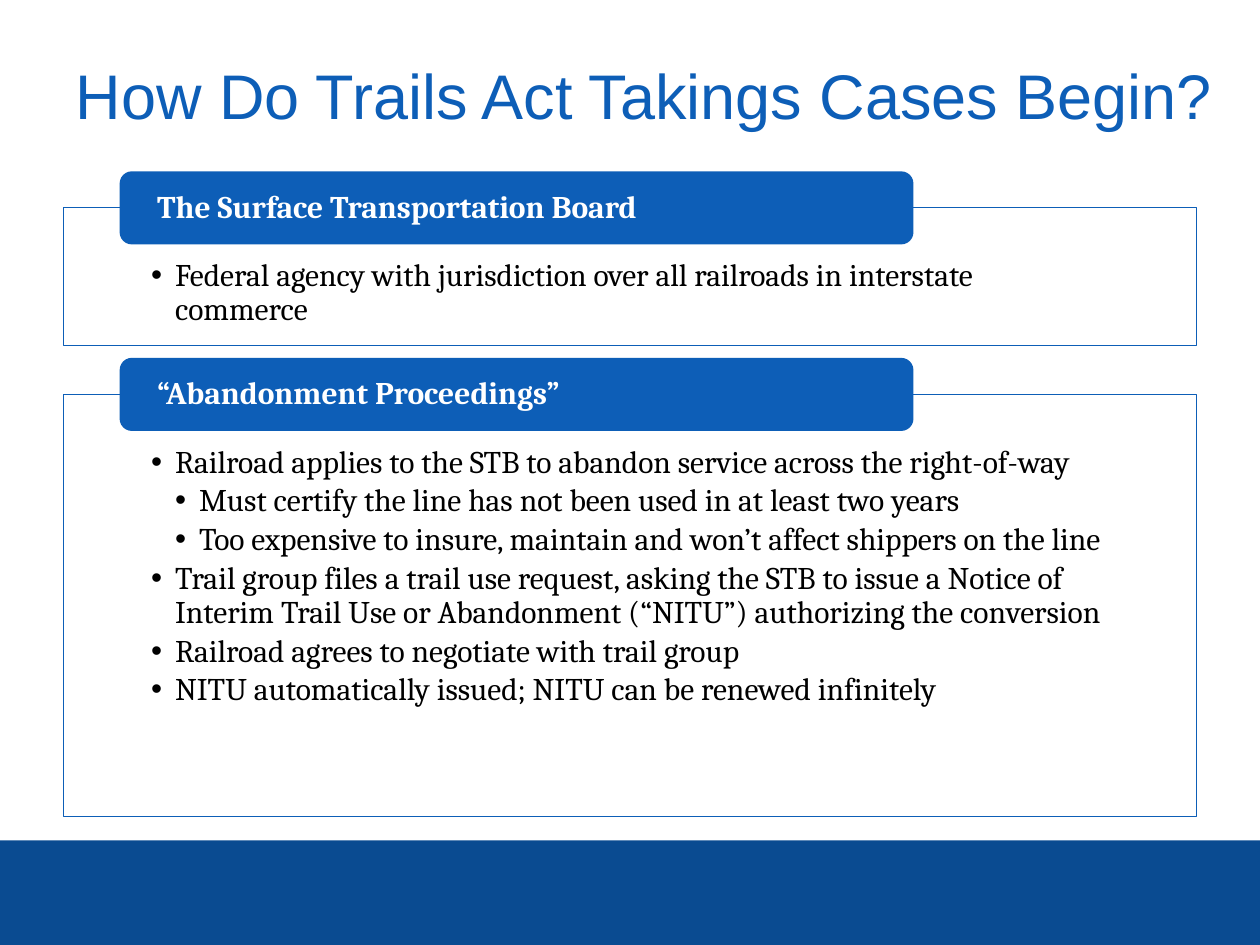
from lxml.etree import SubElement
from pptx import Presentation
from pptx.dml.color import RGBColor
from pptx.enum.shapes import MSO_SHAPE
from pptx.enum.text import MSO_ANCHOR, PP_ALIGN
from pptx.oxml.ns import qn
from pptx.util import Inches, Pt

COLORS = {"blue": "0D5EB7", "navy": "0A4B91", "white": "FFFFFF", "black": "000000"}
INDENT = Inches(0.19)
HEADER_RISE = 0.29

SECTIONS = [
    (1.65, 1.09, "The Surface Transportation Board", [
        (1, "Federal agency with jurisdiction over all railroads in interstate commerce"),
    ]),
    (3.13, 3.35, "“Abandonment Proceedings”", [
        (1, "Railroad applies to the STB to abandon service across the right-of-way"),
        (2, "Must certify the line has not been used in at least two years"),
        (2, "Too expensive to insure, maintain and won’t affect shippers on the line"),
        (1, "Trail group files a trail use request, asking the STB to issue a Notice of "
            "Interim Trail Use or Abandonment (“NITU”) authorizing the conversion"),
        (1, "Railroad agrees to negotiate with trail group"),
        (1, "NITU automatically issued; NITU can be renewed infinitely"),
    ]),
]


def color(name):
    return RGBColor.from_string(COLORS[name])


def add_box(slide, kind, left, top, width, height, fill, line=None):
    shape = slide.shapes.add_shape(
        kind, Inches(left), Inches(top), Inches(width), Inches(height))
    shape.shadow.inherit = False
    shape.fill.solid()
    shape.fill.fore_color.rgb = color(fill)
    if line:
        shape.line.color.rgb = color(line)
        shape.line.width = Pt(0.5)
    else:
        shape.line.fill.background()
    return shape


def set_frame(text_frame, anchor, left, top, right, bottom):
    text_frame.word_wrap = True
    text_frame.vertical_anchor = anchor
    text_frame.margin_left, text_frame.margin_top = Inches(left), Inches(top)
    text_frame.margin_right, text_frame.margin_bottom = Inches(right), Inches(bottom)


def format_paragraph(paragraph, font_name, size, font_color, bold=False):
    paragraph.alignment = PP_ALIGN.LEFT
    paragraph.line_spacing = 0.9
    for run in paragraph.runs:
        run.font.name = font_name
        run.font.size = Pt(size)
        run.font.bold = bold
        run.font.color.rgb = color(font_color)


def add_bullet(paragraph, level):
    properties = paragraph._p.get_or_add_pPr()
    properties.set("marL", str(INDENT * level))
    properties.set("indent", str(-INDENT))
    paragraph.level = level
    paragraph.space_after = Pt(2.7)
    SubElement(properties, qn("a:buFont"), typeface="Arial")
    SubElement(properties, qn("a:buChar"), char="•")


def add_title(slide, text, left, top, width, height):
    title = slide.shapes.title
    title.left, title.top = Inches(left), Inches(top)
    title.width, title.height = Inches(width), Inches(height)
    title.text_frame.text = text
    set_frame(title.text_frame, MSO_ANCHOR.MIDDLE, 0.1, 0.05, 0.1, 0.05)
    format_paragraph(title.text_frame.paragraphs[0], "Arial", 36, "blue")


def add_section(slide, left, top, width, height, heading, items):
    body = add_box(slide, MSO_SHAPE.RECTANGLE, left, top, width, height, "white", "blue")
    text_frame = body.text_frame
    set_frame(text_frame, MSO_ANCHOR.TOP, 0.7, 0.41, 0.7, 0.14)
    text_frame.text = "\n".join(text for level, text in items)
    for paragraph, (level, text) in zip(text_frame.paragraphs, items):
        format_paragraph(paragraph, "Cambria", 18, "black")
        add_bullet(paragraph, level)

    header = add_box(slide, MSO_SHAPE.ROUNDED_RECTANGLE, left + 0.45, top - HEADER_RISE,
                     width * 0.7, 2 * HEADER_RISE, "blue")
    header.text_frame.text = heading
    set_frame(header.text_frame, MSO_ANCHOR.MIDDLE, 0.27, 0, 0.27, 0)
    format_paragraph(header.text_frame.paragraphs[0], "Cambria", 18, "white", bold=True)


def main():
    presentation = Presentation()
    presentation.slide_width, presentation.slide_height = Inches(10), Inches(7.5)
    slide = presentation.slides.add_slide(presentation.slide_layouts[5])
    add_box(slide, MSO_SHAPE.RECTANGLE, 0, 6.67, 10, 0.83, "navy")
    add_title(slide, "How Do Trails Act Takings Cases Begin?", 0.5, 0.33, 9.42, 0.92)
    for top, height, heading, items in SECTIONS:
        add_section(slide, 0.5, top, 9, height, heading, items)
    presentation.save("out.pptx")


if __name__ == "__main__":
    main()
